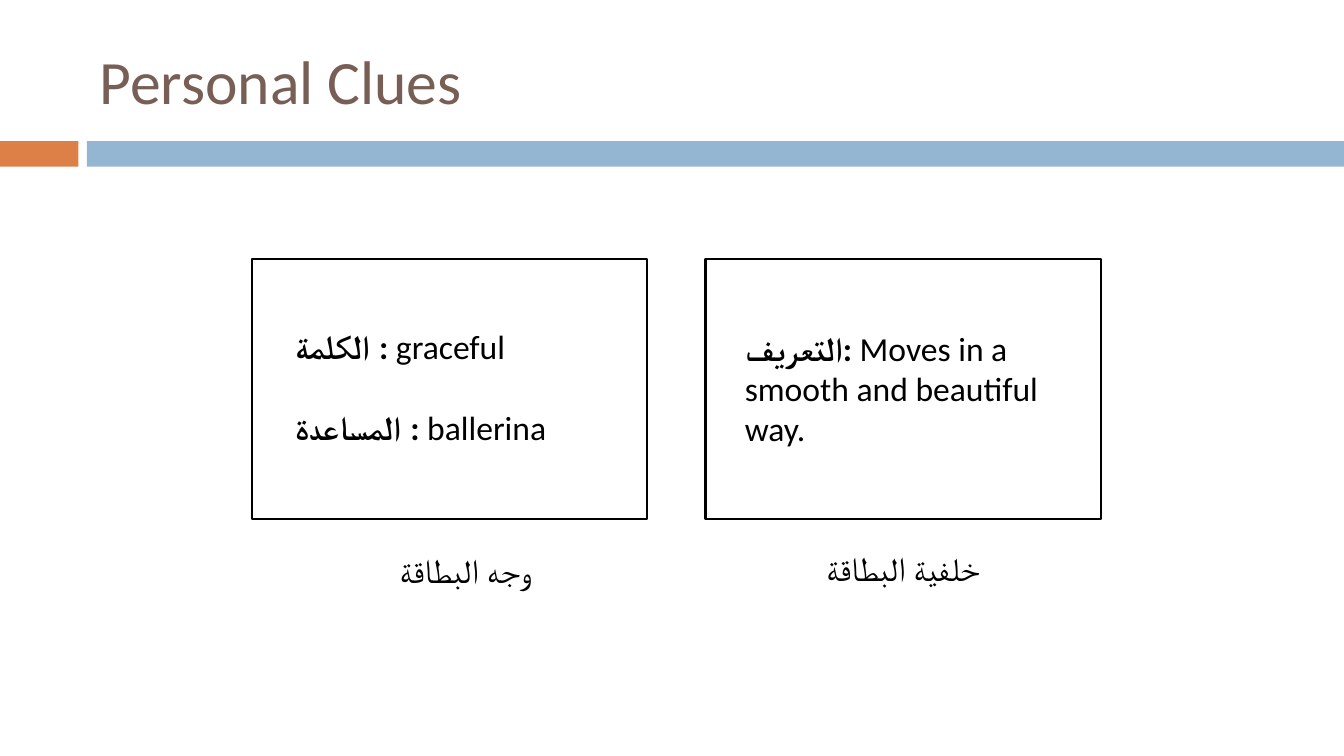
from dataclasses import dataclass

from pptx import Presentation
from pptx.dml.color import RGBColor
from pptx.enum.shapes import MSO_SHAPE
from pptx.enum.text import MSO_ANCHOR, PP_ALIGN
from pptx.shapes.autoshape import Shape
from pptx.slide import Slide
from pptx.text.text import _Paragraph as Paragraph
from pptx.util import Cm, Pt

BLACK = RGBColor(0x00, 0x00, 0x00)
BROWN = RGBColor(0x77, 0x5F, 0x55)
ORANGE = RGBColor(0xDD, 0x80, 0x47)
BLUE = RGBColor(0x94, 0xB6, 0xD2)

PAGE_WIDTH, PAGE_HEIGHT = 33.87, 19.05
BAR_TOP, BAR_HEIGHT = 3.56, 0.64
CARD_TOP, CARD_WIDTH, CARD_HEIGHT = 6.53, 9.96, 6.55
ENTRY_WIDTH, ENTRY_HEIGHT = 8.46, 3.33
CAPTION_WIDTH, CAPTION_HEIGHT = 5.28, 1.27


@dataclass(frozen=True)
class Entry:
    label: str
    colon: str
    meaning: str


@dataclass(frozen=True)
class Card:
    left: float
    entries: tuple[Entry, ...]
    entries_at: tuple[float, float]
    caption: str
    caption_at: tuple[float, float]


CARDS = (
    Card(6.35,
         (Entry("الكلمة ", ": ", "graceful"), Entry("المساعدة ", ": ", "ballerina")),
         (7.19, 8.1), "وجه البطاقة", (9.09, 13.72)),
    Card(17.78,
         (Entry("التعريف", ": ", "Moves in a smooth and beautiful way."),),
         (18.52, 8.13), "خلفية البطاقة", (20.12, 13.67)),
)


def add_rectangle(page: Slide, left: float, top: float, width: float, height: float,
                  fill: RGBColor | None = None, line: RGBColor | None = None) -> Shape:
    box = page.shapes.add_shape(MSO_SHAPE.RECTANGLE, Cm(left), Cm(top), Cm(width), Cm(height))
    box.shadow.inherit = False
    if fill is None:
        box.fill.background()
    else:
        box.fill.solid()
        box.fill.fore_color.rgb = fill
    if line is None:
        box.line.fill.background()
    else:
        box.line.color.rgb = line
        box.line.width = Pt(1.5)
    return box


def add_text_box(page: Slide, left: float, top: float, width: float, height: float,
                 anchor: MSO_ANCHOR = MSO_ANCHOR.TOP) -> Shape:
    box = page.shapes.add_textbox(Cm(left), Cm(top), Cm(width), Cm(height))
    box.text_frame.word_wrap = True
    box.text_frame.vertical_anchor = anchor
    return box


def add_span(para: Paragraph, text: str, *, font: str = "Calibri", size: float = 24,
             color: RGBColor = BLACK, bold: bool = False) -> None:
    span = para.add_run()
    span.text = text
    span.font.name = font
    span.font.size = Pt(size)
    span.font.color.rgb = color
    span.font.bold = bold


def add_card(page: Slide, card: Card) -> None:
    """Draw the framed card, its entries and the caption below it."""
    add_rectangle(page, card.left, CARD_TOP, CARD_WIDTH, CARD_HEIGHT, line=BLACK)

    frame = add_text_box(page, *card.entries_at, ENTRY_WIDTH, ENTRY_HEIGHT).text_frame
    for index, entry in enumerate(card.entries):
        para = frame.add_paragraph() if index else frame.paragraphs[0]
        if index:
            para.space_before = Pt(29)
        add_span(para, entry.label, font="Arial", bold=True)
        add_span(para, entry.colon, bold=True)
        add_span(para, entry.meaning)

    caption = add_text_box(page, *card.caption_at, CAPTION_WIDTH, CAPTION_HEIGHT)
    para = caption.text_frame.paragraphs[0]
    para.alignment = PP_ALIGN.CENTER
    add_span(para, card.caption, font="Arial")


def main() -> None:
    deck = Presentation()
    deck.slide_width, deck.slide_height = Cm(PAGE_WIDTH), Cm(PAGE_HEIGHT)
    page = deck.slides.add_slide(deck.slide_layouts[6])

    add_rectangle(page, 0, BAR_TOP, 1.98, BAR_HEIGHT, fill=ORANGE)
    add_rectangle(page, 2.19, BAR_TOP, PAGE_WIDTH - 2.19, BAR_HEIGHT, fill=BLUE)

    title = add_text_box(page, 2.26, 0.64, 30.2, 2.74, MSO_ANCHOR.MIDDLE)
    add_span(title.text_frame.paragraphs[0], "Personal Clues", size=44, color=BROWN)

    for card in CARDS:
        add_card(page, card)

    deck.save("out.pptx")


if __name__ == "__main__":
    main()
